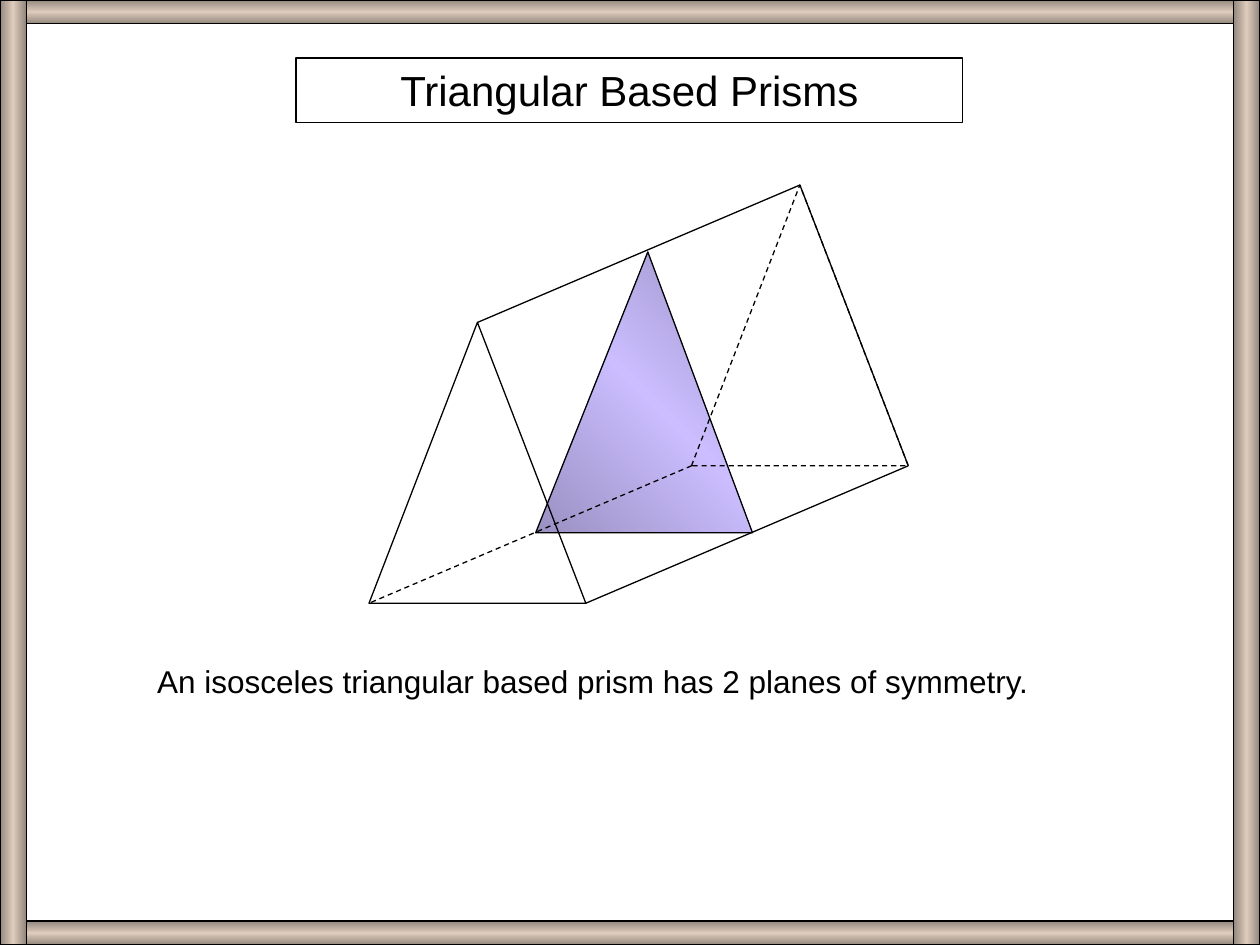
from copy import deepcopy
from pptx import Presentation
from pptx.dml.color import RGBColor
from pptx.enum.dml import MSO_LINE as Dash
from pptx.enum.shapes import MSO_CONNECTOR as Link, MSO_SHAPE as Kind
from pptx.enum.text import MSO_ANCHOR as Anchor, PP_ALIGN as Align
from pptx.oxml.ns import qn
from pptx.util import Cm, Pt

BLACK = RGBColor(0, 0, 0)
LILAC = RGBColor(0xCB, 0xBD, 0xFF)
MAUVE = RGBColor(0x9A, 0x90, 0xC2)
SAND = RGBColor(0xDE, 0xCC, 0xBC)
BROWN = RGBColor(0x93, 0x87, 0x7D)

TITLE = "Triangular Based Prisms"
FACT = "An isosceles triangular based prism has 2 planes of symmetry."

WIDE, HIGH = 25.4, 19.05
RAIL, POST = 0.48, 0.53
BASE, RISE = 4.37, 5.66
FRONT, BACK = (7.44, 6.5), (13.94, 3.73)
PLANE = [(10.8, 10.74), (15.17, 10.74), (13.06, 5.08)]

BARS = [
    (0, 0, WIDE, RAIL, 90),
    (0, HIGH - RAIL, WIDE, RAIL, 90),
    (0, 0, POST, HIGH, 0),
    (WIDE - POST, 0, POST, HIGH, 0),
]


def corners(left, top):
    return {
        "top": (left + BASE / 2, top),
        "left": (left, top + RISE),
        "right": (left + BASE, top + RISE),
    }


def outline(item, dash=None):
    item.line.color.rgb = BLACK
    item.line.width = Pt(0.75)
    if dash:
        item.line.dash_style = dash


def shade(item, edge, mid, angle):
    item.fill.gradient()
    item.fill.gradient_angle = angle
    stops = item._element.spPr.find(".//" + qn("a:gsLst"))
    stops.insert(1, deepcopy(stops[0]))
    for stop, place, color in zip(item.fill.gradient_stops, (0, 0.5, 1), (edge, mid, edge)):
        stop.position = place
        stop.color.rgb = color


def add_shape(kind, left, top, width, height, dash=None):
    item = shapes.add_shape(kind, Cm(left), Cm(top), Cm(width), Cm(height))
    item.shadow.inherit = False
    item.fill.background()
    outline(item, dash)
    return item


def add_edge(start, end, dash=None):
    edge = shapes.add_connector(Link.STRAIGHT, *(Cm(v) for v in start + end))
    props = edge._element.spPr
    outline(edge, dash)
    props.append(props.makeelement(qn("a:effectLst"), {}))


def write(item, text, size, align):
    frame = item.text_frame
    frame.word_wrap = True
    frame.vertical_anchor = Anchor.TOP
    para = frame.paragraphs[0]
    para.text = text
    para.alignment = align
    para.font.name = "Arial"
    para.font.size = Pt(size)
    para.font.color.rgb = BLACK


deck = Presentation()
deck.slide_width, deck.slide_height = Cm(WIDE), Cm(HIGH)
shapes = deck.slides.add_slide(deck.slide_layouts[6]).shapes

points = [(Cm(x), Cm(y)) for x, y in PLANE]
pen = shapes.build_freeform(*points[0])
pen.add_line_segments(points[1:], close=True)
plane = pen.convert_to_shape()
plane.shadow.inherit = False
outline(plane)
shade(plane, MAUVE, LILAC, 45)

add_shape(Kind.ISOSCELES_TRIANGLE, *FRONT, BASE, RISE)
add_shape(Kind.ISOSCELES_TRIANGLE, *BACK, BASE, RISE, Dash.DASH)
near, far = corners(*FRONT), corners(*BACK)
for name, dash in [("right", None), ("top", None), ("left", Dash.DASH)]:
    add_edge(far[name], near[name], dash)
add_edge(far["top"], far["right"])

write(add_shape(Kind.RECTANGLE, 5.97, 1.17, 13.44, 1.3), TITLE, 24, Align.CENTER)
write(shapes.add_textbox(Cm(2.92), Cm(13.23), Cm(19.79), Cm(1.02)), FACT, 18, Align.LEFT)

for *box, angle in BARS:
    shade(add_shape(Kind.RECTANGLE, *box), BROWN, SAND, angle)

deck.save("out.pptx")
